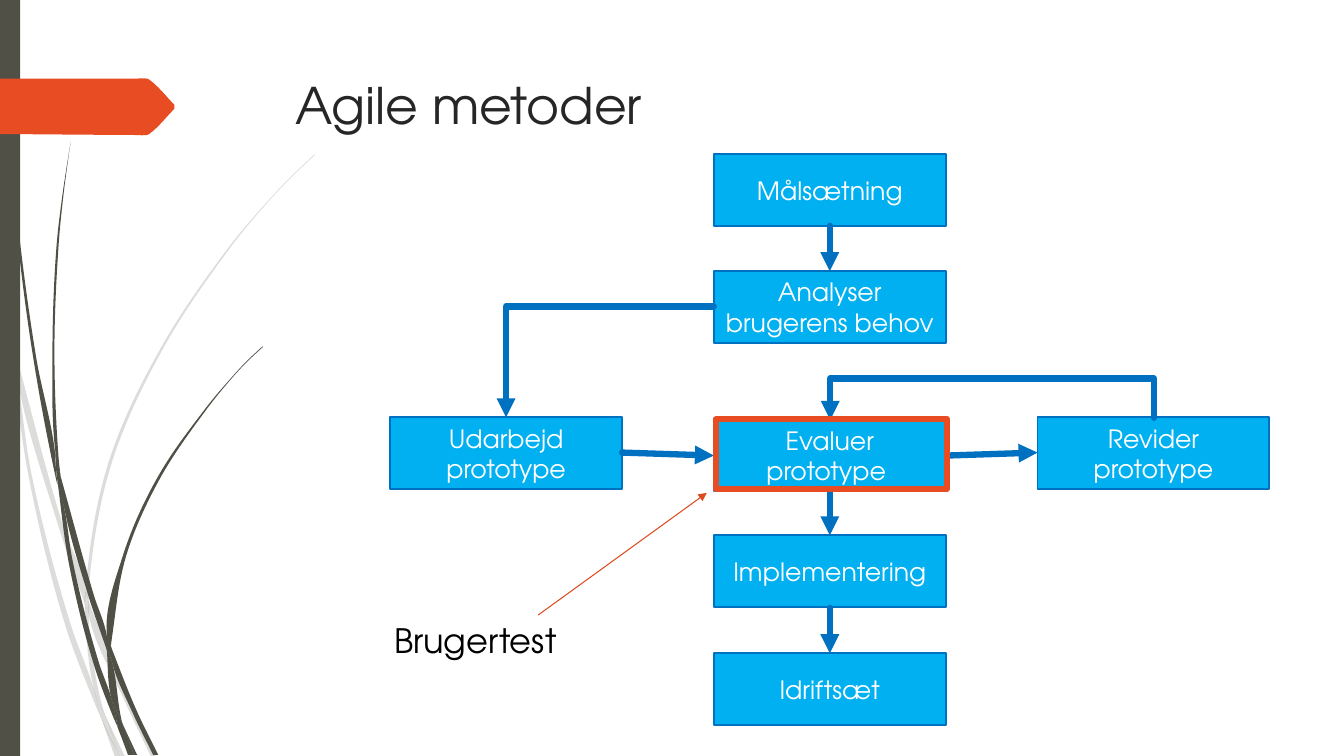
"""Draw the "Agile metoder" flow chart slide."""
import math
from typing import NamedTuple

from lxml import etree
from pptx import Presentation
from pptx import util as u
from pptx.dml.color import RGBColor
from pptx.enum import shapes, text
from pptx.oxml import ns

FONT = "TeX Gyre Adventor"
COLORS = {
    "dark": "505046", "accent": "E84C22", "pointer": "DE4920", "box": "00B0F0",
    "edge": "0070C0", "title": "262626", "black": "000000", "white": "FFFFFF",
}
BOX_W, BOX_H = 2.3, 0.71
LEFT, MID, RIGHT = 3.87, 7.08, 10.29
CENTER = MID + BOX_W / 2


class Step(NamedTuple):
    label: str
    x: float
    y: float


class Arrow(NamedTuple):
    x1: float
    y1: float
    x2: float
    y2: float
    color: str = "edge"
    width: float = 4.5
    preset: str = "line"
    adjust: int = 0
    rotation: int = 0


class Label(NamedTuple):
    words: str
    x: float
    y: float
    w: float
    h: float
    size: int
    color: str
    wrap: bool


PALE_BLADES = [
    [(0.11, 3.5), (0.09, 3.22), (0, 2.82), (0, 2.99), (0.1, 3.44)],
    [(0.58, 5.22), (0.84, 5.99), (0.85, 5.86), (0.62, 5.2), (0.14, 3.45), (0.17, 3.76)],
    [(0.92, 6.07), (0.88, 5.96), (0.88, 6.1), (1.23, 6.94), (1.5, 7.51), (1.55, 7.51), (1.27, 6.92)],
    [(1.19, 7.51), (1.24, 7.51), (1.05, 7.11)],
    [(0.93, 6.83), (0.7, 6.19), (0.31, 4.69), (0.17, 3.76), (0.11, 3.5), (0.28, 4.7), (0.65, 6.21),
     (0.92, 6.93), (1.01, 7.14), (0.99, 7.07)],
    [(0.84, 5.99), (0.87, 6.46), (0.93, 6.83), (0.96, 6.92), (1.05, 7.11), (1.03, 7.06),
     (0.91, 6.46), (0.88, 6.1), (0.88, 6.08)],
    [(0.88, 5.84), (1.1, 4.62), (1.6, 3.49), (2.29, 2.45), (2.68, 1.98), (2.9, 1.75), (3.12, 1.54),
     (3.12, 1.53), (2.89, 1.75), (2.68, 1.97), (2.28, 2.44), (1.58, 3.48), (1.07, 4.61),
     (0.85, 5.84), (0.85, 5.86), (0.88, 5.96)],
    [(1.01, 7.14), (1.14, 7.51), (1.19, 7.51)],
    [(0.88, 6.08), (0.88, 6.1), (0.88, 5.96), (0.85, 5.86), (0.84, 5.99)],
    [(0.96, 6.92), (0.93, 6.83), (0.99, 7.07), (1.01, 7.14), (1.19, 7.51), (1.05, 7.11)],
]
DARK_BLADES = [
    [(0.07, 1.1), (0.17, 2.33), (0.33, 3.55), (0.56, 4.77), (0.57, 4.81), (0.55, 4.57), (0.55, 4.53),
     (0.36, 3.55), (0.19, 2.32), (0.08, 1.09), (0.05, 0.48), (0.04, 0), (0.03, 0), (0.04, 0.48)],
    [(0.88, 5.92), (1.06, 6.45), (1.06, 6.33), (1.06, 6.31), (0.93, 5.9), (0.6, 4.72), (0.64, 5.05)],
    [(1.13, 6.49), (1.1, 6.41), (1.11, 6.56), (1.32, 7.08), (1.52, 7.49), (1.57, 7.49), (1.36, 7.06)],
    [(1.1, 6.91), (0.98, 6.57), (0.72, 5.56), (0.64, 5.05), (0.57, 4.77), (0.68, 5.57), (0.93, 6.59),
     (1.11, 7.08), (1.17, 7.22), (1.16, 7.17)],
    [(0.6, 4.72), (0.58, 4.53), (0.54, 3.49), (0.58, 2.45), (0.63, 1.93), (0.7, 1.41), (0.62, 1.93),
     (0.56, 2.45), (0.52, 3.49), (0.55, 4.49)],
    [(1.33, 7.49), (1.36, 7.49), (1.22, 7.19)],
    [(0.57, 4.77), (0.64, 5.05), (0.6, 4.72), (0.55, 4.49), (0.55, 4.53)],
    [(1.11, 6.33), (1.25, 5.52), (1.58, 4.76), (2.05, 4.06), (2.31, 3.74), (2.45, 3.59), (2.61, 3.44),
     (2.6, 3.44), (2.45, 3.58), (2.31, 3.73), (2.04, 4.05), (1.56, 4.74), (1.22, 5.51),
     (1.06, 6.31), (1.1, 6.41)],
    [(1.17, 7.22), (1.27, 7.49), (1.31, 7.49)],
    [(1.06, 6.45), (1.1, 6.91), (1.16, 7.06), (1.22, 7.19), (1.21, 7.16), (1.11, 6.56), (1.09, 6.51)],
    [(1.06, 6.45), (1.09, 6.51), (1.11, 6.56), (1.1, 6.41), (1.06, 6.31), (1.06, 6.33)],
    [(1.16, 7.06), (1.1, 6.91), (1.16, 7.17), (1.17, 7.22), (1.3, 7.49), (1.33, 7.49), (1.22, 7.19)],
]
BANNER = [(1.73, 1.08), (1.48, 1.33), (1.46, 1.34), (1.36, 1.34), (0, 1.33), (0, 0.78),
          (1.36, 0.78), (1.46, 0.78), (1.48, 0.79), (1.73, 1.04)]
STEPS = [
    Step("Målsætning", MID, 1.53),
    Step("Analyser brugerens behov", MID, 2.69),
    Step("Implementering", MID, 5.31),
    Step("Idriftsæt", MID, 6.48),
    Step("Udarbejd prototype", LEFT, 4.14),
    Step("Revider prototype", RIGHT, 4.14),
]
EVALUATE = Step("Evaluer prototype ", MID, 4.16)
POINTER = Arrow(5.34, 6.1, 7.01, 4.89, "pointer", 0.75)
ARROWS = [
    Arrow(MID, 3.04, LEFT + BOX_W / 2, 4.14, preset="bentConnector2"),
    Arrow(CENTER, 2.24, CENTER, 2.69),
    Arrow(LEFT + BOX_W, 4.49, MID, 4.52),
    Arrow(MID + BOX_W, 4.52, RIGHT, 4.49),
    Arrow(9.85, 5.76, 9.83, 2.55, preset="bentConnector3", adjust=-1950000, rotation=270),
    Arrow(CENTER, 4.87, CENTER, 5.31),
    Arrow(CENTER, 6.03, CENTER, 6.48),
]
TITLE = Label("Agile metoder", 2.83, 0.69, 9.75, 1.4, 36, "title", True)
USER_TEST = Label("Brugertest", 3.81, 6.1, 1.83, 0.5, 24, "black", False)


def inch(value: float) -> u.Length:
    return u.Cm(value * 2.54)


def rgb(name: str) -> RGBColor:
    return RGBColor.from_string(COLORS[name])


def add(parent, tag: str, **attributes: str):
    return etree.SubElement(parent, ns.qn(tag), attributes)


def style(sp, fill: str = "", line: str = "", width: float = 0) -> None:
    sp.shadow.inherit = False
    for name, part in {fill: sp.fill, line: sp.line.fill}.items() if fill != line else ():
        if name:
            part.solid()
            part.fore_color.rgb = rgb(name)
        else:
            part.background()
    if line:
        sp.line.width = u.Pt(width)


def write(tf, words: str, size: int, color: str, align) -> None:
    p = tf.paragraphs[0]
    p.alignment = align
    r = p.add_run()
    r.text = words
    for key, value in {"name": FONT, "size": u.Pt(size), "bold": False}.items():
        setattr(r.font, key, value)
    r.font.color.rgb = rgb(color)


def tangents(points: list[complex]) -> list[complex]:
    """Give the unit direction at each rounded point and zero at each corner."""
    result = []
    for i, point in enumerate(points):
        before, after = point - points[i - 1], points[(i + 1) % len(points)] - point
        turn = before / abs(before) + after / abs(after)
        result.append(turn / abs(turn) if abs(turn) > 1.9 else 0j)
    return result


def add_outline(s, corners: list[tuple[float, float]], fill: str, alpha: int = 100) -> None:
    points = [complex(x, y) for x, y in corners]
    slopes = tangents(points)
    ends = [(inch(x), inch(y)) for x, y in corners]
    builder = s.shapes.build_freeform(*ends[0])
    builder.add_line_segments(ends[1:] + ends[:1], close=True)
    sp = builder.convert_to_shape()
    style(sp, fill)
    if alpha < 100:
        color = sp._element.spPr.find(ns.qn("a:solidFill"))[0]
        add(color, "a:alpha", val=str(alpha * 1000))
    for i, segment in enumerate(list(sp._element.iter(ns.qn("a:lnTo")))):
        j = (i + 1) % len(points)
        chord = points[j] - points[i]
        reach = math.hypot(chord.real, chord.imag) / 3
        controls = (points[i] + (slopes[i] * reach or chord / 3),
                    points[j] - (slopes[j] * reach or chord / 3), points[j])
        curve = etree.Element(ns.qn("a:cubicBezTo"))
        for point in controls:
            add(curve, "a:pt", x=str(inch(point.real) - sp.left), y=str(inch(point.imag) - sp.top))
        segment.getparent().replace(segment, curve)


def add_rect(s, x: float, y: float, w: float, h: float, *look):
    sp = s.shapes.add_shape(shapes.MSO_SHAPE.RECTANGLE, *map(inch, (x, y, w, h)))
    style(sp, *look)
    return sp


def add_step(s, step: Step) -> None:
    tf = add_rect(s, step.x, step.y, BOX_W, BOX_H, "box", "edge", 1.25).text_frame
    tf.word_wrap = True
    tf.vertical_anchor = text.MSO_ANCHOR.MIDDLE
    write(tf, step.label, 18, "white", text.PP_ALIGN.CENTER)


def add_label(s, label: Label) -> None:
    tf = s.shapes.add_textbox(*map(inch, label[1:5])).text_frame
    tf.word_wrap = label.wrap
    write(tf, label.words, label.size, label.color, text.PP_ALIGN.LEFT)


def add_arrow(s, arrow: Arrow) -> None:
    kind = shapes.MSO_CONNECTOR.STRAIGHT if arrow.preset == "line" else shapes.MSO_CONNECTOR.ELBOW
    cxn = s.shapes.add_connector(kind, *map(inch, arrow[:4]))
    cxn.line.color.rgb = rgb(arrow.color)
    cxn.line.width = u.Pt(arrow.width)
    props = cxn._element.spPr
    geometry = props.find(ns.qn("a:prstGeom"))
    geometry.set("prst", arrow.preset)
    if arrow.adjust:
        add(geometry.find(ns.qn("a:avLst")), "a:gd", name="adj1", fmla=f"val {arrow.adjust}")
    if arrow.rotation:
        props.find(ns.qn("a:xfrm")).set("rot", str(arrow.rotation * 60000))
    ln = props.find(ns.qn("a:ln"))
    ln.set("cap", "rnd")
    add(ln, "a:round")
    add(ln, "a:tailEnd", type="triangle")
    add(props, "a:effectLst")


prs = Presentation()
prs.slide_width, prs.slide_height = inch(13.33), inch(7.5)
s = prs.slides.add_slide(prs.slide_layouts[6])
for blades, alpha in ((PALE_BLADES, 20), (DARK_BLADES, 100)):
    for blade in blades:
        add_outline(s, blade, "dark", alpha)
add_rect(s, 0, 0, 0.2, 7.5, "dark")
add_outline(s, BANNER, "accent")
add_label(s, TITLE)
add_arrow(s, POINTER)
add_label(s, USER_TEST)
for step in STEPS:
    add_step(s, step)
for arrow in ARROWS:
    add_arrow(s, arrow)
add_step(s, EVALUATE)
add_rect(s, 7.1, 4.16, 2.29, 0.69, "", "accent", 4.5)
prs.save("out.pptx")
